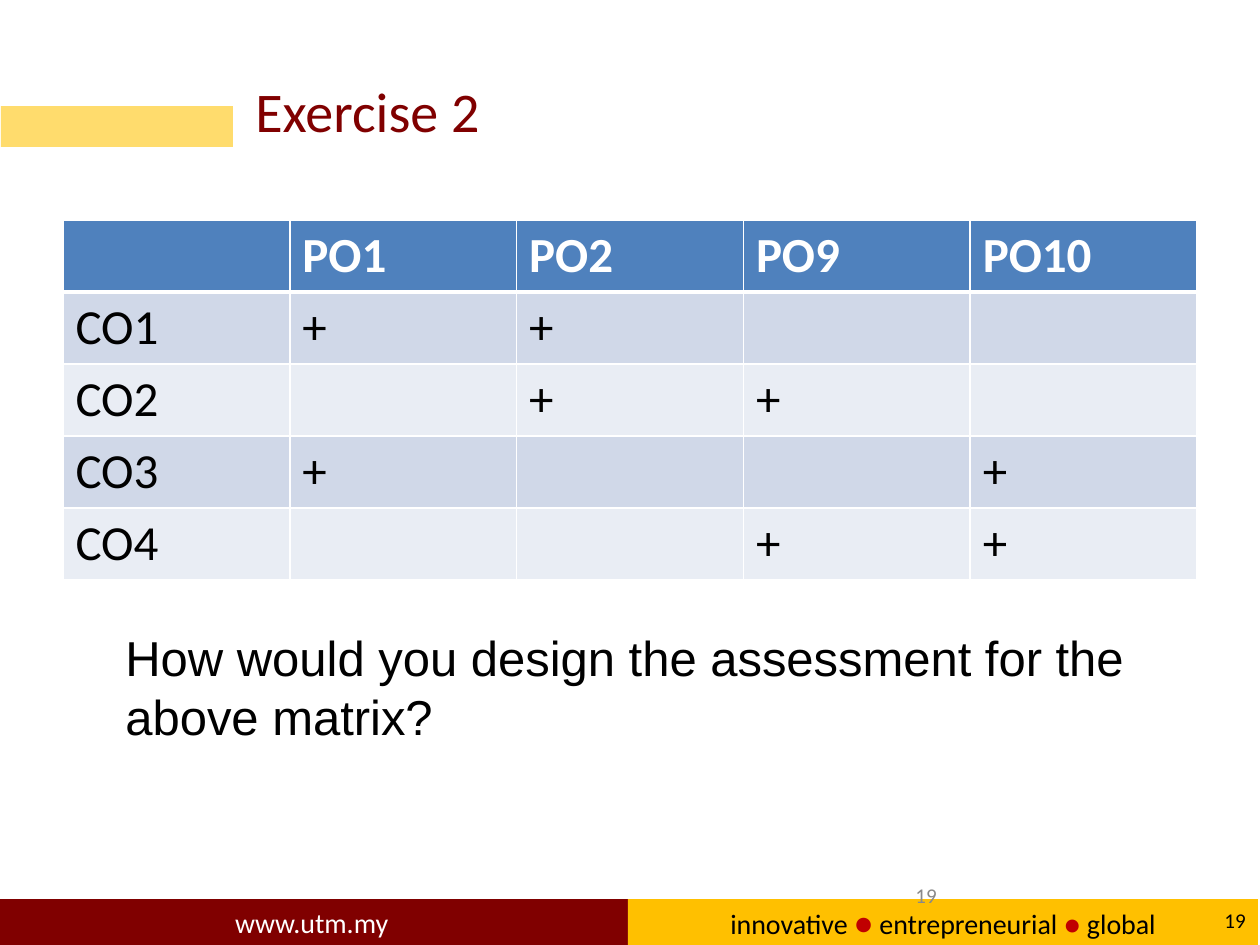
from dataclasses import dataclass

from lxml.etree import SubElement
from pptx import Presentation
from pptx.dml.color import RGBColor
from pptx.enum.shapes import MSO_SHAPE as SHAPE
from pptx.enum.text import MSO_ANCHOR as ANCHOR, PP_ALIGN as ALIGN
from pptx.oxml.ns import qn
from pptx.util import Pt

EMU_PER_PX = 914400 / 126


@dataclass(frozen=True)
class Theme:
    maroon: str = "800000"
    gold: str = "FFC000"
    pale_gold: str = "FFDC6D"
    red: str = "C00000"
    blue: str = "4F81BD"
    bands: tuple = ("D0D8E8", "E9EDF4")
    black: str = "000000"
    white: str = "FFFFFF"
    grey: str = "898989"
    font: str = "Calibri"
    question_font: str = "Arial"
    title: int = 32
    body: int = 28
    bullet: int = 18
    footer: int = 16
    number: int = 12


T = Theme()

MATRIX = [
    ["", "PO1", "PO2", "PO9", "PO10"],
    ["CO1", "+", "+", "", ""],
    ["CO2", "", "+", "+", ""],
    ["CO3", "+", "", "", "+"],
    ["CO4", "", "", "+", "+"],
]


def px(n):
    return round(n * EMU_PER_PX)


def box(*lengths):
    return [px(n) for n in lengths]


def style(r, size, color, font=T.font, bold=False):
    r.font.size = Pt(size)
    r.font.name = font
    r.font.bold = bold
    r.font.color.rgb = RGBColor.from_string(color)


def write(tf, runs, align=ALIGN.LEFT, anchor=ANCHOR.MIDDLE, font=T.font):
    """Fill a frame with one paragraph of (text, size, color) runs."""
    tf.word_wrap = True
    tf.vertical_anchor = anchor
    p = tf.paragraphs[0]
    p.alignment = align
    for text, size, color in runs:
        r = p.add_run()
        r.text = text
        style(r, size, color, font)


def add_bar(s, at, fill, runs=()):
    sp = s.shapes.add_shape(SHAPE.RECTANGLE, *box(*at))
    sp.shadow.inherit = False
    sp.fill.solid()
    sp.fill.fore_color.rgb = RGBColor.from_string(fill)
    sp.line.fill.background()
    if runs:
        write(sp.text_frame, runs, ALIGN.CENTER)


def add_text(s, at, text, size, color, **layout):
    sp = s.shapes.add_textbox(*box(*at))
    write(sp.text_frame, [(text, size, color)], **layout)


def set_borders(cell, bottom, top):
    """Draw white cell borders; bottom and top are widths in points."""
    tcPr = cell._tc.get_or_add_tcPr()
    widths = {"a:lnL": 1, "a:lnR": 1, "a:lnT": top, "a:lnB": bottom}
    for tag, width in widths.items():
        ln = SubElement(tcPr, qn(tag), w=str(Pt(width)))
        fill = SubElement(ln, qn("a:solidFill"))
        SubElement(fill, qn("a:srgbClr"), val=T.white)


def add_matrix(s, at, rows):
    tbl = s.shapes.add_table(len(rows), len(rows[0]), *box(*at)).table
    for i, row in enumerate(rows):
        header = i == 0
        fill = T.blue if header else T.bands[(i - 1) % 2]
        for j, text in enumerate(row):
            cell = tbl.cell(i, j)
            set_borders(cell, bottom=3 if header else 1, top=3 if i == 1 else 1)
            cell.fill.solid()
            cell.fill.fore_color.rgb = RGBColor.from_string(fill)
            if text:
                cell.text_frame.text = text
                style(cell.text_frame.paragraphs[0].runs[0], T.body,
                      T.white if header else T.black, bold=header)


def add_footer(s):
    add_bar(s, (0, 899, 630, 46), T.maroon,
            [("www.utm.my ", T.footer, T.white)])
    add_bar(s, (628, 899, 630, 46), T.gold, [
        ("innovative ", T.footer, T.black),
        ("●", T.bullet, T.red),
        (" entrepreneurial ", T.footer, T.black),
        ("● ", T.footer, T.red),
        ("global", T.footer, T.black),
    ])
    add_text(s, (1176, 895, 82, 50), "19", T.number, T.black,
             align=ALIGN.RIGHT)


def main():
    prs = Presentation()
    prs.slide_width, prs.slide_height = box(1260, 945)
    s = prs.slides.add_slide(prs.slide_layouts[6])
    add_footer(s)
    add_bar(s, (1, 106, 232, 41), T.pale_gold)
    add_text(s, (243, 66, 934, 89), "Exercise 2", T.title, T.maroon)
    add_matrix(s, (63, 220, 1134, 360), MATRIX)
    add_text(s, (113, 621, 1032, 131),
             "How would you design the assessment for the above matrix?",
             T.body, T.black, anchor=ANCHOR.TOP, font=T.question_font)
    add_text(s, (903, 876, 294, 50), "19", T.number, T.grey,
             anchor=ANCHOR.TOP)
    prs.save("out.pptx")


if __name__ == "__main__":
    main()
